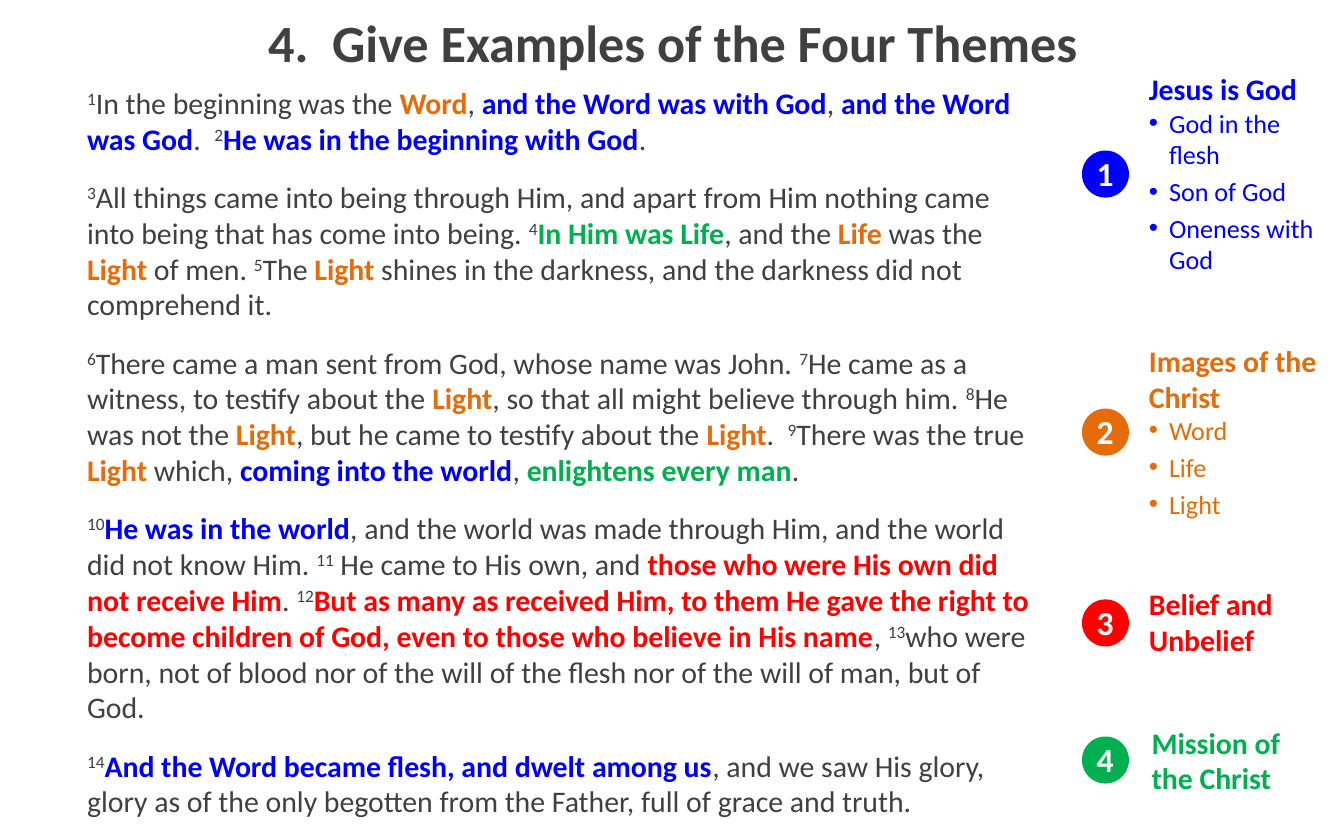
import pptx
import pptx.util
import pptx.dml.color
import pptx.enum.shapes
import pptx.enum.text
import pptx.oxml.ns
import lxml.etree
from dataclasses import dataclass

Inches = pptx.util.Inches
Pt = pptx.util.Pt
RGB = pptx.dml.color.RGBColor.from_string
Anchor = pptx.enum.text.MSO_ANCHOR
Align = pptx.enum.text.PP_ALIGN
Auto = pptx.enum.text.MSO_AUTO_SIZE


@dataclass(frozen=True)
class Theme:
    face: str = "Calibri"
    ink: str = "404040"
    white: str = "FFFFFF"
    blue: str = "0000FF"
    orange: str = "E46C0A"
    red: str = "FF0000"
    green: str = "00B050"
    title: int = 28
    body: int = 16
    item: int = 14
    badge: int = 18


THEME = Theme()

# In verses, [^n] is a verse number; [b..], [o..], [r..], [g..] mark a theme
MARKS = {"b": THEME.blue, "o": THEME.orange, "r": THEME.red, "g": THEME.green}

VERSES = [
    "[^1]In the beginning was the [oWord], [band the Word was with God], "
    "[band the Word was God].  [^2][bHe was in the beginning with God].",

    "[^3]All things came into being through Him, and apart from Him nothing "
    "came into being that has come into being. [^4][gIn Him was Life], and the "
    "[oLife] was the [oLight] of men. [^5]The [oLight] shines in the darkness, "
    "and the darkness did not comprehend it.",

    "[^6]There came a man sent from God, whose name was John. [^7]He came as a "
    "witness, to testify about the [oLight], so that all might believe through "
    "him. [^8]He was not the [oLight], but he came to testify about the "
    "[oLight].  [^9]There was the true [oLight ]which, "
    "[bcoming into the world], [genlightens every man].",

    "[^10][bHe was in the world], and the world was made through Him, and the "
    "world did not know Him. [^11] He came to His own, and [rthose who were His "
    "own did not receive Him]. [^12][rBut as many as received Him, to them He "
    "gave the right to become children of God, even to those who believe in "
    "His name], [^13]who were born, not of blood nor of the will of the flesh "
    "nor of the will of man, but of God.",

    "[^14][bAnd the Word became flesh, and dwelt among us], and we saw His "
    "glory, glory as of the only begotten from the Father, full of grace and "
    "truth.",
]

# Heading, colour, bullets, text left, text top, text height, badge top
TOPICS = [
    ("Jesus is God", THEME.blue,
     ["God in the flesh", "Son of God", "Oneness with God"],
     8.45, 0.48, 1.63, 1.12),
    ("Images of the Christ", THEME.orange, ["Word", "Life", "Light"],
     8.45, 2.5, 1.43, 3.04),
    ("Belief and Unbelief", THEME.red, [], 8.45, 4.31, 0.64, 4.46),
    ("Mission of the Christ", THEME.green, [], 8.47, 5.34, 0.64, 5.48),
]


def add_box(shapes, left, top, width, height, **form):
    box = shapes.add_textbox(*map(Inches, (left, top, width, height)))
    frame = box.text_frame
    for name, value in ({"word_wrap": True} | form).items():
        setattr(frame, name, value)
    return frame


def add_run(para, text, size, color, bold=False):
    run = para.add_run()
    run.text = text
    form = {"name": THEME.face, "size": Pt(size), "bold": bold}
    for name, value in form.items():
        setattr(run.font, name, value)
    run.font.color.rgb = RGB(color)
    return run


def add_verse(para, verse):
    # Odd pieces lie inside brackets
    for spot, piece in enumerate(verse.replace("]", "[").split("[")):
        if not piece:
            continue
        if spot % 2 == 0:
            add_run(para, piece, THEME.body, THEME.ink)
        elif piece[0] == "^":
            run = add_run(para, piece[1:], THEME.body, THEME.ink)
            run.font._element.set("baseline", "30000")
        else:
            add_run(para, piece[1:], THEME.body, MARKS[piece[0]], True)


def add_item(frame, text, color):
    para = frame.add_paragraph()
    props = para._p.get_or_add_pPr()
    props.set("marL", str(Inches(0.15)))
    props.set("indent", str(Inches(-0.15)))
    for tag, key, value in (("a:buFont", "typeface", "Arial"),
                            ("a:buChar", "char", "•")):
        node = lxml.etree.SubElement(props, pptx.oxml.ns.qn(tag))
        node.set(key, value)
    para.space_after = Pt(3)
    add_run(para, text, THEME.item, color)


def add_badge(slide, label, color, top):
    left, side = 8.05, 0.35
    group = slide.shapes.add_group_shape()
    disc = group.shapes.add_shape(
        pptx.enum.shapes.MSO_SHAPE.OVAL,
        *map(Inches, (left, top, side, side)))
    disc.shadow.inherit = False
    disc.fill.solid()
    disc.fill.fore_color.rgb = RGB(color)
    disc.line.fill.background()
    frame = add_box(group.shapes, left + 0.11, top + 0.02, 0.13, 0.3,
                    word_wrap=False, auto_size=Auto.SHAPE_TO_FIT_TEXT,
                    margin_left=0, margin_right=0,
                    margin_top=0, margin_bottom=0)
    add_run(frame.paragraphs[0], label, THEME.badge, THEME.white, True)


def add_topic(slide, label, topic):
    head, color, items, left, top, height, disc = topic
    add_badge(slide, label, color, disc)
    frame = add_box(slide.shapes, left, top, 1.5, height,
                    auto_size=Auto.SHAPE_TO_FIT_TEXT)
    add_run(frame.paragraphs[0], head, THEME.body, color, True)
    for item in items:
        add_item(frame, item, color)


def main():
    deck = pptx.Presentation()
    deck.slide_width, deck.slide_height = Inches(10), Inches(6.25)
    slide = deck.slides.add_slide(deck.slide_layouts[6])

    # Title
    frame = add_box(slide.shapes, 1.42, 0.08, 7.17, 0.46,
                    vertical_anchor=Anchor.MIDDLE)
    para = frame.paragraphs[0]
    para.alignment = Align.CENTER
    add_run(para, "4.  Give Examples of the Four Themes",
            THEME.title, THEME.ink, True)

    # Passage
    frame = add_box(slide.shapes, 0.55, 0.58, 7.3, 5.55)
    for spot, verse in enumerate(VERSES):
        para = frame.add_paragraph() if spot else frame.paragraphs[0]
        para.space_after = Pt(12)
        add_verse(para, verse)

    # Numbered themes
    for count, topic in enumerate(TOPICS, 1):
        add_topic(slide, str(count), topic)

    deck.save("out.pptx")


if __name__ == "__main__":
    main()
